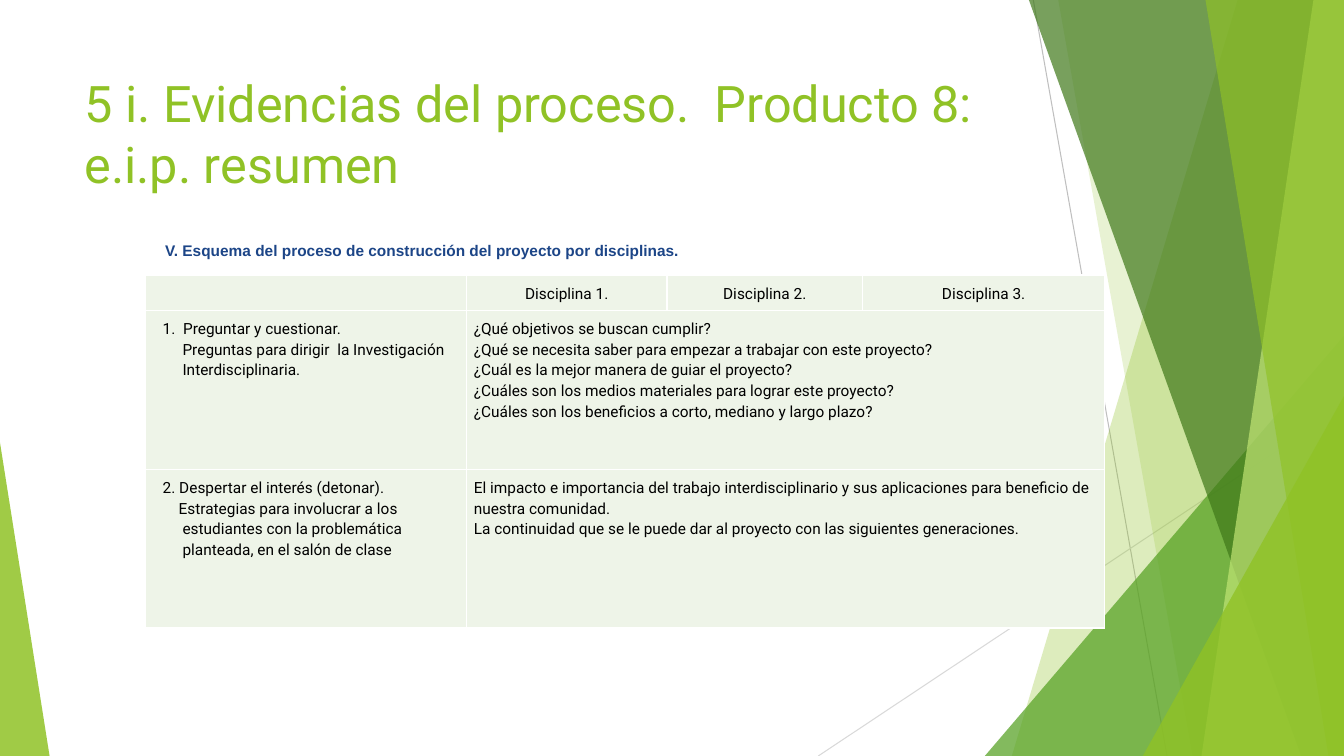
from lxml.etree import SubElement as Sub
from pptx import Presentation
from pptx.dml.color import RGBColor as Rgb
from pptx.enum.shapes import MSO_CONNECTOR as Conn, MSO_SHAPE as Shape
from pptx.enum.text import MSO_ANCHOR as Anchor, PP_ALIGN as Align
from pptx.oxml.ns import qn
from pptx.util import Cm, Pt

WIDE, HIGH = 33.87, 19.05
GREEN = "90C226"
PAD = Cm(0.18)

LINES = [
    (26.04, 0, 29.41, HIGH, "BFBFBF"),
    (WIDE, 10.24, 20.62, HIGH, "D9D9D9"),
]
BACK = [(31.19, 25.5, GREEN, 30), (26.67, 30.05, GREEN, 20)]
FRONT = [
    (25.93, 32.79, "3F7819", 70),
    (33.1, 30.28, "C0E474", 70),
    (30.38, 33.48, GREEN, 65),
]
COLS = [8.1, 5.05, 4.93, 6.1]
ROWS = [0.87, 4, 4]
HEADS = ["Disciplina 1.", "Disciplina 2.", "Disciplina 3."]
STEPS = [
    (
        [
            ("1.  Preguntar y cuestionar.", -0.5),
            ("Preguntas para dirigir  la Investigación Interdisciplinaria.", 0),
        ],
        [
            "¿Qué objetivos se buscan cumplir?",
            "¿Qué se necesita saber para empezar a trabajar con este proyecto?",
            "¿Cuál es la mejor manera de guiar el proyecto?",
            "¿Cuáles son los medios materiales para lograr este proyecto?",
            "¿Cuáles son los beneficios a corto, mediano y largo plazo?",
        ],
    ),
    (
        [
            ("2. Despertar el interés (detonar).", -0.5),
            ("Estrategias para involucrar a los estudiantes con la "
             "problemática planteada, en el salón de clase", -0.1),
        ],
        [
            "El impacto e importancia del trabajo interdisciplinario y sus "
            "aplicaciones para beneficio de nuestra comunidad.",
            "La continuidad que se le puede dar al proyecto con las "
            "siguientes generaciones.",
        ],
    ),
]


def tint(color, code):
    color.rgb = Rgb.from_string(code)


def paint(shape, code, alpha):
    shape.shadow.inherit = False
    shape.fill.solid()
    tint(shape.fill.fore_color, code)
    shape.line.fill.background()
    color = shape.element.spPr.find(qn("a:solidFill"))[0]
    Sub(color, qn("a:alpha"), val=str(alpha * 1000))


def add_line(slide, x1, y1, x2, y2, code):
    line = slide.shapes.add_connector(
        Conn.STRAIGHT, Cm(x1), Cm(y1), Cm(x2), Cm(y2))
    line.line.width = Pt(0.75)
    tint(line.line.color, code)
    Sub(line.element.spPr, qn("a:effectLst"))


def add_band(slide, top, base, code, alpha):
    form = slide.shapes.build_freeform(Cm(top), 0)
    form.add_line_segments(
        [(Cm(WIDE), 0), (Cm(WIDE), Cm(HIGH)), (Cm(base), Cm(HIGH))])
    paint(form.convert_to_shape(), code, alpha)


def add_peak(slide, left, top, width, tip, code, alpha):
    peak = slide.shapes.add_shape(
        Shape.ISOSCELES_TRIANGLE,
        Cm(left), Cm(top), Cm(width), Cm(HIGH - top))
    peak.adjustments[0] = tip
    paint(peak, code, alpha)


def add_run(para, text, size, code, font="Roboto", bold=False):
    run = para.add_run()
    run.text = text
    run.font.size = Pt(size)
    run.font.name = font
    run.font.bold = bold
    tint(run.font.color, code)


def add_text(slide, left, top, width, height, wrap, *style):
    box = slide.shapes.add_textbox(Cm(left), Cm(top), Cm(width), Cm(height))
    frame = box.text_frame
    frame.word_wrap = wrap
    frame.vertical_anchor = Anchor.TOP if wrap else Anchor.MIDDLE
    add_run(frame.paragraphs[0], *style)


def dress(cell):
    cell.margin_left = cell.margin_right = PAD
    cell.margin_top = cell.margin_bottom = 0
    props = cell._tc.get_or_add_tcPr()
    for side in ("lnL", "lnR", "lnT", "lnB"):
        edge = Sub(props, qn("a:" + side), w=str(Pt(1)))
        Sub(Sub(edge, qn("a:solidFill")), qn("a:srgbClr"), val="FFFFFF")
    cell.fill.solid()
    tint(cell.fill.fore_color, "EEF4E8")


def fill_cell(cell, texts, align=Align.LEFT):
    cell.margin_top = cell.margin_bottom = PAD
    frame = cell.text_frame
    for i, text in enumerate(texts):
        para = frame.add_paragraph() if i else frame.paragraphs[0]
        para.alignment = align
        para.line_spacing = 1.15
        add_run(para, text, 11, "000000")


def add_grid(slide):
    grid = slide.shapes.add_table(
        len(ROWS), len(COLS), Cm(3.66), Cm(6.93),
        Cm(sum(COLS)), Cm(sum(ROWS))).table
    grid.first_row = grid.horz_banding = False
    for col, width in zip(grid.columns, COLS):
        col.width = Cm(width)
    for row, height in zip(grid.rows, ROWS):
        row.height = Cm(height)
        for cell in row.cells:
            dress(cell)
    for c, head in enumerate(HEADS, 1):
        fill_cell(grid.cell(0, c), [head], Align.CENTER)
    for r, (step, notes) in enumerate(STEPS, 1):
        cell = grid.cell(r, 0)
        fill_cell(cell, [text for text, _ in step])
        for para, (_, shift) in zip(cell.text_frame.paragraphs, step):
            props = para._p.get_or_add_pPr()
            props.set("marL", str(Cm(0.76)))
            props.set("indent", str(Cm(shift)))
        grid.cell(r, 1).merge(grid.cell(r, 3))
        fill_cell(grid.cell(r, 1), notes)


def main():
    deck = Presentation()
    deck.slide_width, deck.slide_height = Cm(WIDE), Cm(HIGH)
    slide = deck.slides.add_slide(deck.slide_layouts[6])
    for line in LINES:
        add_line(slide, *line)
    for band in BACK:
        add_band(slide, *band)
    add_peak(slide, 24.82, 8.46, 9.05, 1, "54A021", 72)
    for band in FRONT:
        add_band(slide, *band)
    add_peak(slide, 28.8, 9.98, 5.07, 1, GREEN, 80)
    add_peak(slide, 0, 11.15, 1.25, 0, GREEN, 85)
    add_text(slide, 1.88, 1.7, 23.88, 3.66, True,
             "5 i. Evidencias del proceso.  Producto 8: e.i.p. resumen",
             36, GREEN)
    add_grid(slide)
    add_text(slide, 3.91, 5.9, 13.6, 0.8, False,
             "V. Esquema del proceso de construcción del proyecto "
             "por disciplinas.", 11, "1C4587", "Arial", True)
    deck.save("out.pptx")


if __name__ == "__main__":
    main()
